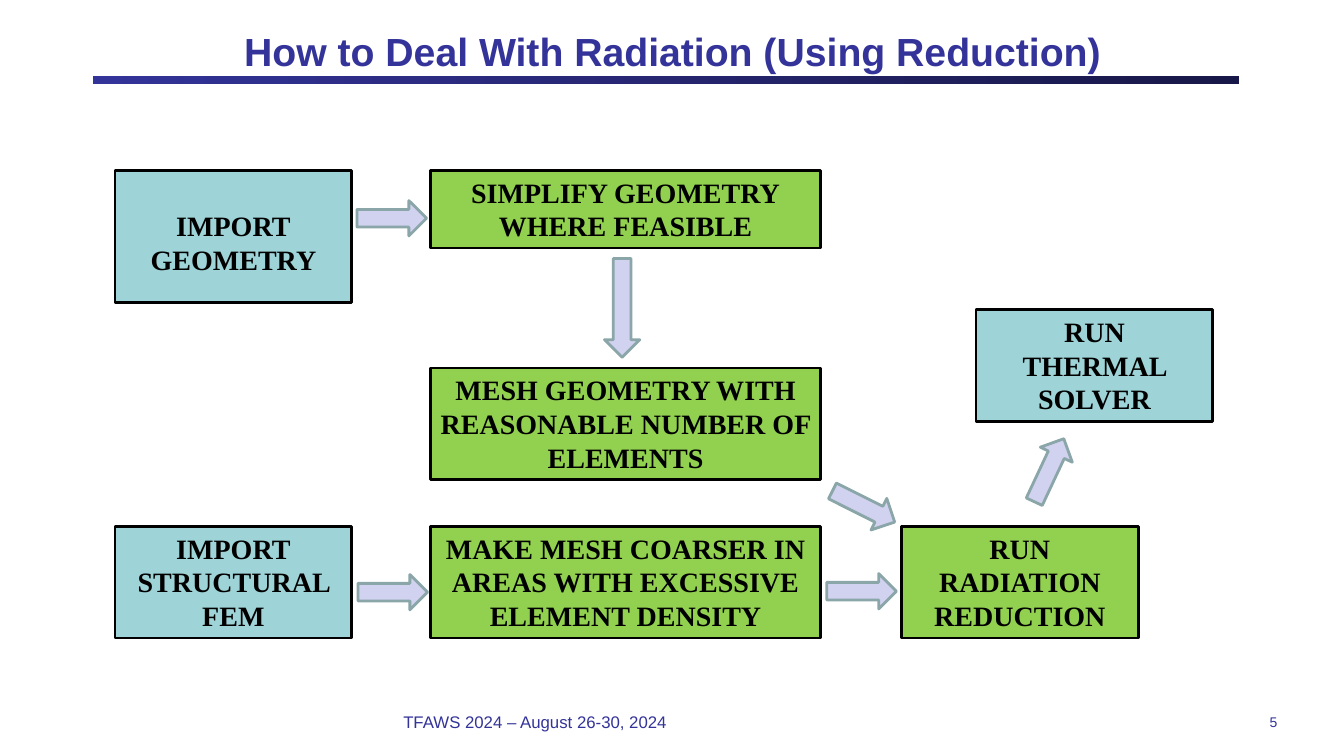
from dataclasses import dataclass

from lxml import etree
from pptx import Presentation
from pptx.dml.color import RGBColor
from pptx.enum.shapes import MSO_SHAPE
from pptx.enum.text import MSO_ANCHOR, MSO_AUTO_SIZE, PP_ALIGN
from pptx.oxml.ns import qn
from pptx.util import Inches, Pt

RECTANGLE = MSO_SHAPE.RECTANGLE
RIGHT_ARROW = MSO_SHAPE.RIGHT_ARROW
TOP, MIDDLE = MSO_ANCHOR.TOP, MSO_ANCHOR.MIDDLE
LEFT, CENTER, RIGHT = PP_ALIGN.LEFT, PP_ALIGN.CENTER, PP_ALIGN.RIGHT
NO_AUTOFIT = MSO_AUTO_SIZE.NONE
TITLE_ONLY = 5


@dataclass(frozen=True)
class Theme:
    navy: str = "333399"
    dark_navy: str = "181848"
    black: str = "000000"
    teal: str = "9ED3D7"
    green: str = "92D050"
    lavender: str = "D1D1F0"
    arrow_outline: str = "8AA6A8"
    heading_font: str = "Arial"
    step_font: str = "Times New Roman"
    title_size: int = 28
    step_size: int = 20
    footer_size: int = 12
    number_size: int = 10
    outline: int = 2


THEME = Theme()
ARROW_LENGTH = 0.69
ARROW_WIDTH = 0.35
SIDE_WIDTH = 2.35
MIDDLE_WIDTH = 3.87
STEP_HEIGHT = 1.11
IMPORT_LEFT, MESH_LEFT = 1.14, 4.27
TOP_ROW, BOTTOM_ROW = 1.69, 5.22

STEPS = [
    (["IMPORT", "GEOMETRY"], IMPORT_LEFT, TOP_ROW, SIDE_WIDTH, 1.31, THEME.teal, 0.38),
    (["SIMPLIFY GEOMETRY", "WHERE FEASIBLE"],
     MESH_LEFT, TOP_ROW, MIDDLE_WIDTH, 0.77, THEME.green, 0.05),
    (["MESH GEOMETRY WITH REASONABLE NUMBER OF ELEMENTS"],
     MESH_LEFT, 3.65, MIDDLE_WIDTH, STEP_HEIGHT, THEME.green, 0.05),
    (["IMPORT", "STRUCTURAL FEM"],
     IMPORT_LEFT, BOTTOM_ROW, SIDE_WIDTH, STEP_HEIGHT, THEME.teal, 0.05),
    (["MAKE MESH COARSER IN AREAS WITH EXCESSIVE ELEMENT DENSITY"],
     MESH_LEFT, BOTTOM_ROW, MIDDLE_WIDTH, STEP_HEIGHT, THEME.green, 0.05),
    (["RUN RADIATION REDUCTION"],
     8.94, BOTTOM_ROW, SIDE_WIDTH, STEP_HEIGHT, THEME.green, 0.05),
    (["RUN", "THERMAL SOLVER"], 9.68, 3.07, SIDE_WIDTH, STEP_HEIGHT, THEME.teal, 0.05),
]

ARROWS = [
    (3.54, 1.99, ARROW_LENGTH, 0),
    (5.68, 2.88, 0.98, 90),
    (8.22, 4.85, ARROW_LENGTH, 26.6),
    (3.55, 5.7, ARROW_LENGTH, 0),
    (8.2, 5.69, ARROW_LENGTH, 0),
    (10.06, 4.49, ARROW_LENGTH, 295.1),
]


def color(value):
    return RGBColor.from_string(value)


def format_font(font, name, size, value, bold=False):
    font.name = name
    font.size = Pt(size)
    font.color.rgb = color(value)
    font.bold = bold


def format_frame(frame, anchor, side=0, top=0, bottom=0):
    frame.word_wrap = True
    frame.auto_size = NO_AUTOFIT
    frame.vertical_anchor = anchor
    frame.margin_left = frame.margin_right = Inches(side)
    frame.margin_top = Inches(top)
    frame.margin_bottom = Inches(bottom)


def add_panel(slide, kind, left, top, width, height, fill, outline):
    shape = slide.shapes.add_shape(
        kind, Inches(left), Inches(top), Inches(width), Inches(height))
    shape.shadow.inherit = False
    shape.fill.solid()
    shape.fill.fore_color.rgb = color(fill)
    shape.line.color.rgb = color(outline)
    shape.line.width = Pt(THEME.outline)
    return shape


def add_step(slide, lines, left, top, width, height, fill, inset):
    shape = add_panel(slide, RECTANGLE, left, top, width, height, fill, THEME.black)
    frame = shape.text_frame
    format_frame(frame, TOP, 0.1, inset, 0.05)
    for index, line in enumerate(lines):
        paragraph = frame.add_paragraph() if index else frame.paragraphs[0]
        paragraph.alignment = CENTER
        run = paragraph.add_run()
        run.text = line
        format_font(run.font, THEME.step_font, THEME.step_size, THEME.black, True)


def add_arrow(slide, left, top, length, rotation):
    arrow = add_panel(slide, RIGHT_ARROW, left, top, length, ARROW_WIDTH,
                      THEME.lavender, THEME.arrow_outline)
    arrow.rotation = rotation


def add_title_rule(slide):
    rule = slide.shapes.add_shape(
        RECTANGLE, Inches(0.92), Inches(0.75), Inches(11.37), Inches(0.08))
    rule.shadow.inherit = False
    rule.line.fill.background()
    rule.fill.gradient()
    rule.fill.gradient_angle = 0
    for stop, value in zip(rule.fill.gradient_stops, (THEME.navy, THEME.dark_navy)):
        stop.color.rgb = color(value)


def set_title(slide, text):
    title = slide.shapes.title
    title.left, title.top = Inches(0.67), Inches(0.21)
    title.width, title.height = Inches(12), Inches(0.58)
    format_frame(title.text_frame, MIDDLE, 0.1)
    paragraph = title.text_frame.paragraphs[0]
    paragraph.alignment = CENTER
    run = paragraph.add_run()
    run.text = text
    format_font(run.font, THEME.heading_font, THEME.title_size, THEME.navy, True)


def add_footer_text(slide, text, left, width, size, alignment):
    box = slide.shapes.add_textbox(Inches(left), Inches(7), Inches(width), Inches(0.33))
    format_frame(box.text_frame, MIDDLE)
    paragraph = box.text_frame.paragraphs[0]
    paragraph.alignment = alignment
    run = paragraph.add_run()
    run.text = text
    format_font(run.font, THEME.heading_font, size, THEME.navy)
    return run


def make_slide_number(run):
    element = run._r
    field = etree.Element(qn("a:fld"), nsmap=element.nsmap)
    field.set("id", "{B6F15528-21DE-4FAA-801E-634DDDAF4B2B}")
    field.set("type", "slidenum")
    element.getparent().replace(element, field)
    for child in list(element):
        field.append(child)


def main():
    presentation = Presentation()
    presentation.slide_width = Inches(13.33)
    presentation.slide_height = Inches(7.5)
    element = presentation.element
    element.set("firstSlideNum", "5")
    slide = presentation.slides.add_slide(presentation.slide_layouts[TITLE_ONLY])
    add_title_rule(slide)
    set_title(slide, "How to Deal With Radiation (Using Reduction)")
    for step in STEPS:
        add_step(slide, *step)
    for arrow in ARROWS:
        add_arrow(slide, *arrow)
    add_footer_text(slide, "TFAWS 2024 – August 26-30, 2024", 4, 5.33,
                    THEME.footer_size, LEFT)
    number = add_footer_text(slide, "5", 9.89, 2.78, THEME.number_size, RIGHT)
    make_slide_number(number)
    presentation.save("out.pptx")


if __name__ == "__main__":
    main()
